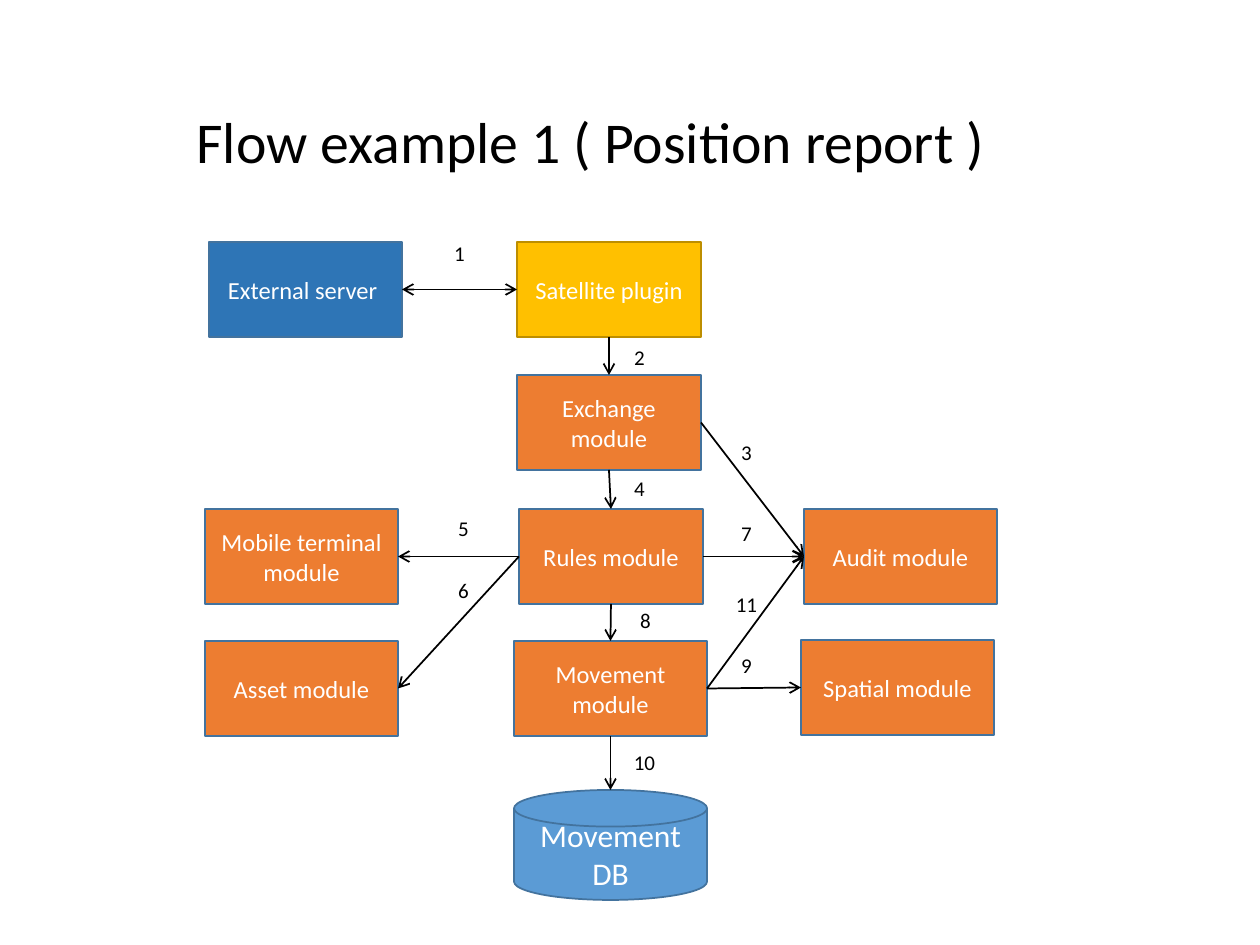
from lxml import etree
from pptx import Presentation
from pptx.dml.color import RGBColor
from pptx.enum.shapes import MSO_CONNECTOR, MSO_SHAPE
from pptx.enum.text import MSO_ANCHOR, MSO_AUTO_SIZE, PP_ALIGN
from pptx.oxml.ns import qn
from pptx.util import Emu, Pt

RECT, DISK = MSO_SHAPE.RECTANGLE, MSO_SHAPE.FLOWCHART_MAGNETIC_DISK
STRAIGHT = MSO_CONNECTOR.STRAIGHT
MIDDLE, TOP_ANCHOR = MSO_ANCHOR.MIDDLE, MSO_ANCHOR.TOP
LEFT_ALIGN, CENTER = PP_ALIGN.LEFT, PP_ALIGN.CENTER
FIT_SHAPE = MSO_AUTO_SIZE.SHAPE_TO_FIT_TEXT
TOP, LEFT, BOTTOM, RIGHT = range(4)

BLACK = RGBColor(0x00, 0x00, 0x00)
WHITE = RGBColor(0xFF, 0xFF, 0xFF)
ORANGE = RGBColor(0xED, 0x7D, 0x31)
GOLD = RGBColor(0xFF, 0xC0, 0x00)
DARK_GOLD = RGBColor(0xBD, 0x8E, 0x00)
BLUE = RGBColor(0x2E, 0x75, 0xB6)
LIGHT_BLUE = RGBColor(0x5B, 0x9B, 0xD5)
OUTLINE = RGBColor(0x43, 0x73, 0x9E)

FONT = "Calibri"
PX = 914400 / 126
NODE_H, DISK_H = 95, 110
NARROW, WIDE = 184, 193
ROW_1, ROW_2, ROW_3, ROW_4, ROW_5 = 0, 133, 267, 399, 548

# key: text, left, top, width, fill, outline
MODULES = {
    "server": ("External server ", 4, ROW_1, WIDE, BLUE, OUTLINE),
    "plugin": ("Satellite plugin", 312, ROW_1, NARROW, GOLD, DARK_GOLD),
    "exchange": ("Exchange module", 312, ROW_2, NARROW, ORANGE, OUTLINE),
    "terminal": ("Mobile terminal module", 0, ROW_3, WIDE, ORANGE, OUTLINE),
    "rules": ("Rules module", 314, ROW_3, NARROW, ORANGE, OUTLINE),
    "audit": ("Audit module", 599, ROW_3, WIDE, ORANGE, OUTLINE),
    "asset": ("Asset module", 0, ROW_4, WIDE, ORANGE, OUTLINE),
    "movement": ("Movement module", 309, ROW_4, WIDE, ORANGE, OUTLINE),
    "spatial": ("Spatial module", 596, ROW_4 - 1, WIDE, ORANGE, OUTLINE),
}

# step: from, side, to, side, label left, label top
STEPS = {
    1: ("server", RIGHT, "plugin", LEFT, 236, -8),
    2: ("plugin", BOTTOM, "exchange", TOP, 416, 96),
    3: ("exchange", RIGHT, "audit", LEFT, 523, 191),
    4: ("exchange", BOTTOM, "rules", TOP, 416, 227),
    5: ("rules", LEFT, "terminal", RIGHT, 240, 267),
    6: ("rules", LEFT, "asset", RIGHT, 240, 329),
    7: ("rules", RIGHT, "audit", LEFT, 523, 272),
    8: ("rules", BOTTOM, "movement", TOP, 422, 359),
    9: ("movement", RIGHT, "spatial", LEFT, 523, 404),
    10: ("movement", BOTTOM, "database", TOP, 416, 501),
    11: ("movement", RIGHT, "audit", LEFT, 518, 343),
}
TWO_WAY = {1}


def px(*lengths):
    return [Emu(round(length * PX)) for length in lengths]


def write(shape, text, size, color, align=CENTER, spacing=None, **frame_format):
    frame = shape.text_frame
    for name, value in frame_format.items():
        setattr(frame, name, value)
    paragraph = frame.paragraphs[0]
    paragraph.alignment = align
    paragraph.line_spacing = spacing
    run = paragraph.add_run()
    run.text = text
    for name, value in {"name": FONT, "size": Pt(size)}.items():
        setattr(run.font, name, value)
    run.font.color.rgb = color


def add_title(slide, left, top, width, height):
    title = slide.shapes.add_textbox(*px(left, top, width, height))
    write(title, "Flow example 1 ( Position report )", 33, BLACK, LEFT_ALIGN, 0.9,
          word_wrap=True, vertical_anchor=MIDDLE)


def add_node(slide, kind, box, text, size, fill, outline):
    node = slide.shapes.add_shape(kind, *px(*box))
    node.shadow.inherit = False
    node.fill.solid()
    node.fill.fore_color.rgb = fill
    node.line.color.rgb = outline
    node.line.width = Pt(1)
    write(node, text, size, WHITE, word_wrap=True, vertical_anchor=MIDDLE)
    return node


def add_arrow(slide, source, source_side, target, target_side, two_way):
    top_middle = target.left + target.width // 2, target.top
    arrow = slide.shapes.add_connector(STRAIGHT, 0, 0, *top_middle)
    arrow.begin_connect(source, source_side)
    # A disk has other connection sites, so its arrow ends freely at the top.
    if target.auto_shape_type == RECT:
        arrow.end_connect(target, target_side)
    arrow.line.color.rgb = BLACK
    arrow.line.width = Pt(1)
    line = arrow.line._get_or_add_ln()
    for end in ("a:headEnd", "a:tailEnd") if two_way else ("a:tailEnd",):
        etree.SubElement(line, qn(end), type="arrow")
    etree.SubElement(arrow._element.spPr, qn("a:effectLst"))


def add_step_label(slide, step, left, top):
    width = 37 if step < 10 else 47
    label = slide.shapes.add_textbox(*px(left, top, width, 38))
    write(label, str(step), 12, BLACK, word_wrap=False,
          auto_size=FIT_SHAPE, vertical_anchor=TOP_ANCHOR)


def add_flow(slide, left, top):
    nodes = {}
    for key, (text, x, y, width, fill, outline) in MODULES.items():
        box = left + x, top + y, width, NODE_H
        nodes[key] = add_node(slide, RECT, box, text, 14, fill, outline)
    disk_box = left + 309, top + ROW_5, WIDE, DISK_H
    nodes["database"] = add_node(slide, DISK, disk_box, "Movement DB", 18, LIGHT_BLUE, OUTLINE)

    for step, (source, source_side, target, target_side, x, y) in STEPS.items():
        add_arrow(slide, nodes[source], source_side, nodes[target], target_side,
                  step in TWO_WAY)
        add_step_label(slide, step, left + x, top + y)


def main():
    presentation = Presentation()
    presentation.slide_width, presentation.slide_height = px(1260, 945)
    slide = presentation.slides.add_slide(presentation.slide_layouts[6])
    add_title(slide, 184, 66, 814, 157)
    add_flow(slide, 205, 242)
    presentation.save("out.pptx")


if __name__ == "__main__":
    main()
